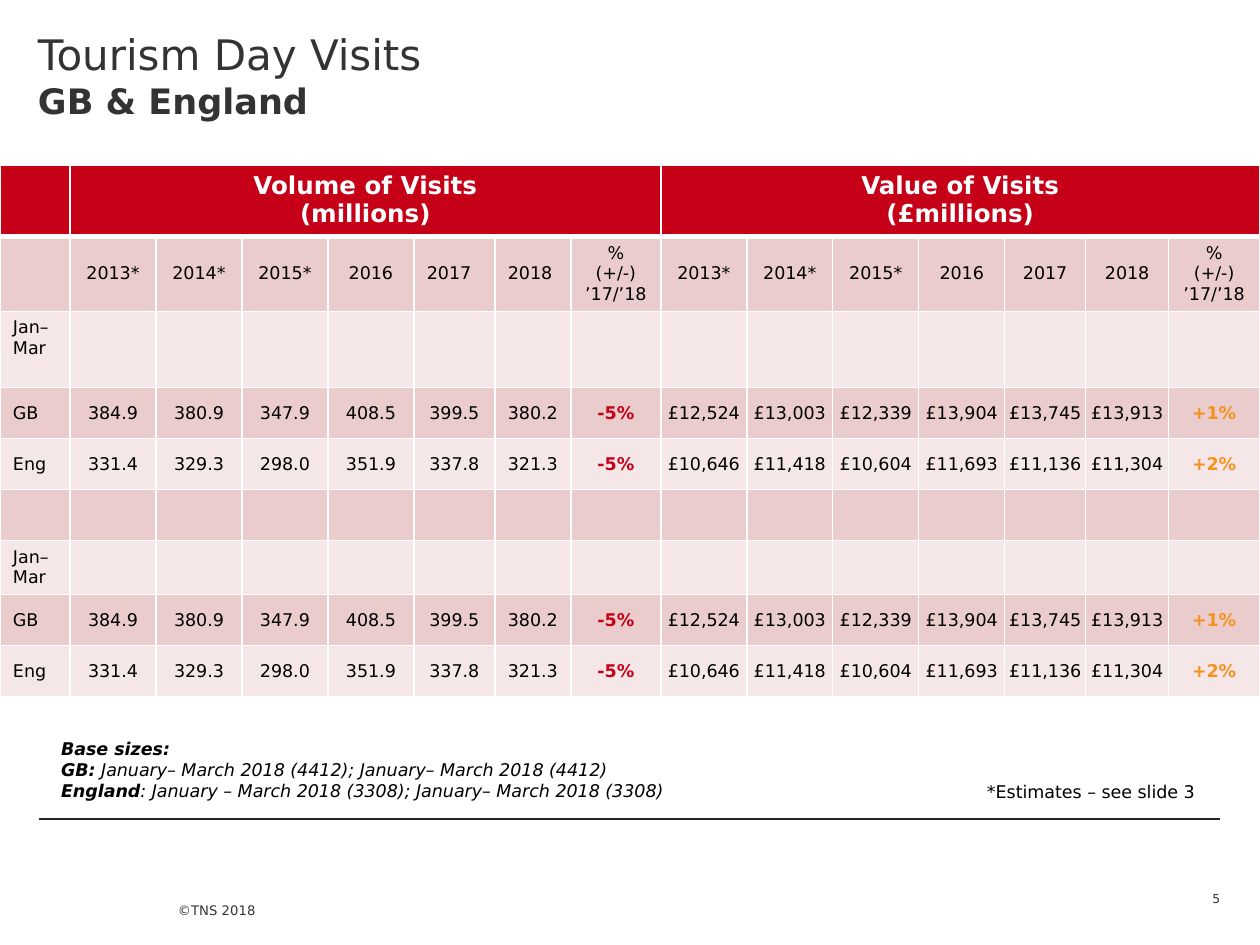
from lxml.etree import SubElement
from pptx import Presentation
from pptx.dml.color import RGBColor
from pptx.enum.shapes import MSO_CONNECTOR
from pptx.enum.text import MSO_ANCHOR as ANCHOR, PP_ALIGN as ALIGN
from pptx.oxml import parse_xml
from pptx.oxml.ns import nsdecls, qn
from pptx.util import Pt

SCALE = 914400 / 126  # EMU per px
FONT = "DejaVu Sans"
COLORS = {
    "title": "333333", "rule": "262626", "black": "000000", "white": "FFFFFF",
    "red": "C50017", "orange": "F7911E", "dark_band": "EACCCC", "light_band": "F5E7E8",
}

# Content: a paragraph is a list of (text, style) runs
BOLD_ITALIC, ITALIC = {"bold": True, "italic": True}, {"italic": True}
TITLE = [[("Tourism Day Visits", {"size": 24})], [("GB & England", {"size": 20, "bold": True})]]
BASE_SIZES = [
    [("Base sizes:", BOLD_ITALIC)],
    [("GB:", BOLD_ITALIC), (" January– March 2018 (4412); January– March 2018 (4412)", ITALIC)],
    [("England", BOLD_ITALIC), (": January – March 2018 (3308); January– March 2018 (3308)", ITALIC)],
]
GROUPS = {1: ["Volume of Visits", "(millions)"], 8: ["Value of Visits", "(£millions)"]}
GROUP_SIZE = 7
YEARS = ["2013*", "2014*", "2015*", "2016", "2017", "2018", "%\n(+/-) ’17/’18"]
PERIOD = [
    ["Jan– Mar"],
    ["GB", "384.9", "380.9", "347.9", "408.5", "399.5", "380.2", "-5%",
     "£12,524", "£13,003", "£12,339", "£13,904", "£13,745", "£13,913", "+1%"],
    ["Eng", "331.4", "329.3", "298.0", "351.9", "337.8", "321.3", "-5%",
     "£10,646", "£11,418", "£10,604", "£11,693", "£11,136", "£11,304", "+2%"],
]
BODY = [["", *YEARS, *YEARS], *PERIOD, [], *PERIOD]
COLUMN_WIDTHS = [70, 86, 86, 86, 86, 81, 76, 90, 86, 86, 86, 86, 81, 83, 91]
ROW_HEIGHTS = [71, 75, 76] + [51] * 6
TABLE_TOP = 165
CELL_INSETS, NUMBER_INSETS = (13, 6, 13, 6), (1, 1, 1, 0)


def px(value):
    return round(value * SCALE)


def set_insets(target, insets):
    sides = ("margin_left", "margin_top", "margin_right", "margin_bottom")
    for side, value in zip(sides, insets):
        setattr(target, side, px(value))


def write(frame, paragraphs, size=10, color="black", align=ALIGN.LEFT):
    for index, runs in enumerate(paragraphs):
        paragraph = frame.paragraphs[0] if index == 0 else frame.add_paragraph()
        paragraph.alignment = align
        for text, style in runs:
            run = paragraph.add_run()
            run.text = text
            font = run.font
            font.name = FONT
            font.size = Pt(style.get("size", size))
            font.bold = style.get("bold", False)
            font.italic = style.get("italic", False)
            font.color.rgb = RGBColor.from_string(COLORS[color])


def add_text(slide, box, paragraphs, insets=CELL_INSETS, anchor=ANCHOR.TOP, wrap=True, **style):
    frame = slide.shapes.add_textbox(*map(px, box)).text_frame
    frame.word_wrap = wrap
    frame.vertical_anchor = anchor
    set_insets(frame, insets)
    write(frame, paragraphs, **style)


def style_cell(cell, fill, top=1, bottom=1):
    properties = cell._tc.get_or_add_tcPr()
    for side, width in (("L", 1), ("R", 1), ("T", top), ("B", bottom)):
        properties.append(parse_xml(
            f'<a:ln{side} {nsdecls("a")} w="{Pt(width)}"><a:solidFill>'
            f'<a:srgbClr val="{COLORS["white"]}"/></a:solidFill></a:ln{side}>'))
    cell.fill.solid()
    cell.fill.fore_color.rgb = RGBColor.from_string(COLORS[fill])


def fill_body_cell(cell, text, row, column):
    is_number = row > 1 and column > 0
    set_insets(cell, NUMBER_INSETS if is_number else CELL_INSETS)
    cell.vertical_anchor = ANCHOR.TOP if row == 2 else ANCHOR.MIDDLE
    is_change = is_number and text.endswith("%")
    color = "black"
    if is_change:
        color = "red" if text.startswith("-") else "orange"
    left_aligned = column == 0 or (row == 1 and column in (5, 6))
    write(cell.text_frame, [[(line, {"bold": is_change})] for line in text.split("\n")],
          color=color, align=ALIGN.LEFT if left_aligned else ALIGN.CENTER)


def add_visits_table(slide):
    box = (0, TABLE_TOP, sum(COLUMN_WIDTHS), sum(ROW_HEIGHTS))
    table = slide.shapes.add_table(
        len(ROW_HEIGHTS), len(COLUMN_WIDTHS), *map(px, box)).table
    for column, width in zip(table.columns, COLUMN_WIDTHS):
        column.width = px(width)
    for row, height in zip(table.rows, ROW_HEIGHTS):
        row.height = px(height)

    # Header row with two merged groups
    for column in range(len(COLUMN_WIDTHS)):
        style_cell(table.cell(0, column), "red", bottom=3)
    for start, lines in GROUPS.items():
        cell = table.cell(0, start)
        cell.merge(table.cell(0, start + GROUP_SIZE - 1))
        write(cell.text_frame, [[(line, {"bold": True})] for line in lines],
              size=14, color="white", align=ALIGN.CENTER)

    # Banded body rows
    for row, values in enumerate(BODY, start=1):
        for column in range(len(COLUMN_WIDTHS)):
            cell = table.cell(row, column)
            style_cell(cell, "dark_band" if row % 2 else "light_band", top=3 if row == 1 else 1)
            if column < len(values) and values[column]:
                fill_body_cell(cell, values[column], row, column)


def add_rule(slide):
    rule = slide.shapes.add_connector(
        MSO_CONNECTOR.STRAIGHT, px(39), px(819), px(1220), px(819))
    rule.line.color.rgb = RGBColor.from_string(COLORS["rule"])
    rule.line.width = Pt(0.75)
    SubElement(rule._element.spPr, qn("a:effectLst"))


def main():
    presentation = Presentation()
    presentation.slide_width, presentation.slide_height = px(1260), px(945)
    slide = presentation.slides.add_slide(presentation.slide_layouts[6])

    # Footer
    add_text(slide, (178, 872, 103, 73), [[("©TNS 2018", {})]], insets=(0, 0, 0, 37),
             anchor=ANCHOR.BOTTOM, size=7.5, color="title")
    add_rule(slide)

    # Title, table and notes
    add_text(slide, (0, 0, 699, 176), TITLE, insets=(38, 29, 38, 0), color="title")
    add_visits_table(slide)
    add_text(slide, (48, 732, 1063, 77), BASE_SIZES)
    add_text(slide, (974, 775, 242, 34), [[("*Estimates – see slide 3", {})]], wrap=False)

    # Page number
    add_text(slide, (1150, 872, 70, 34), [[("5", {})]], insets=(0, 0, 0, 0),
             anchor=ANCHOR.BOTTOM, size=7, color="title", align=ALIGN.RIGHT)

    presentation.save("out.pptx")


if __name__ == "__main__":
    main()
